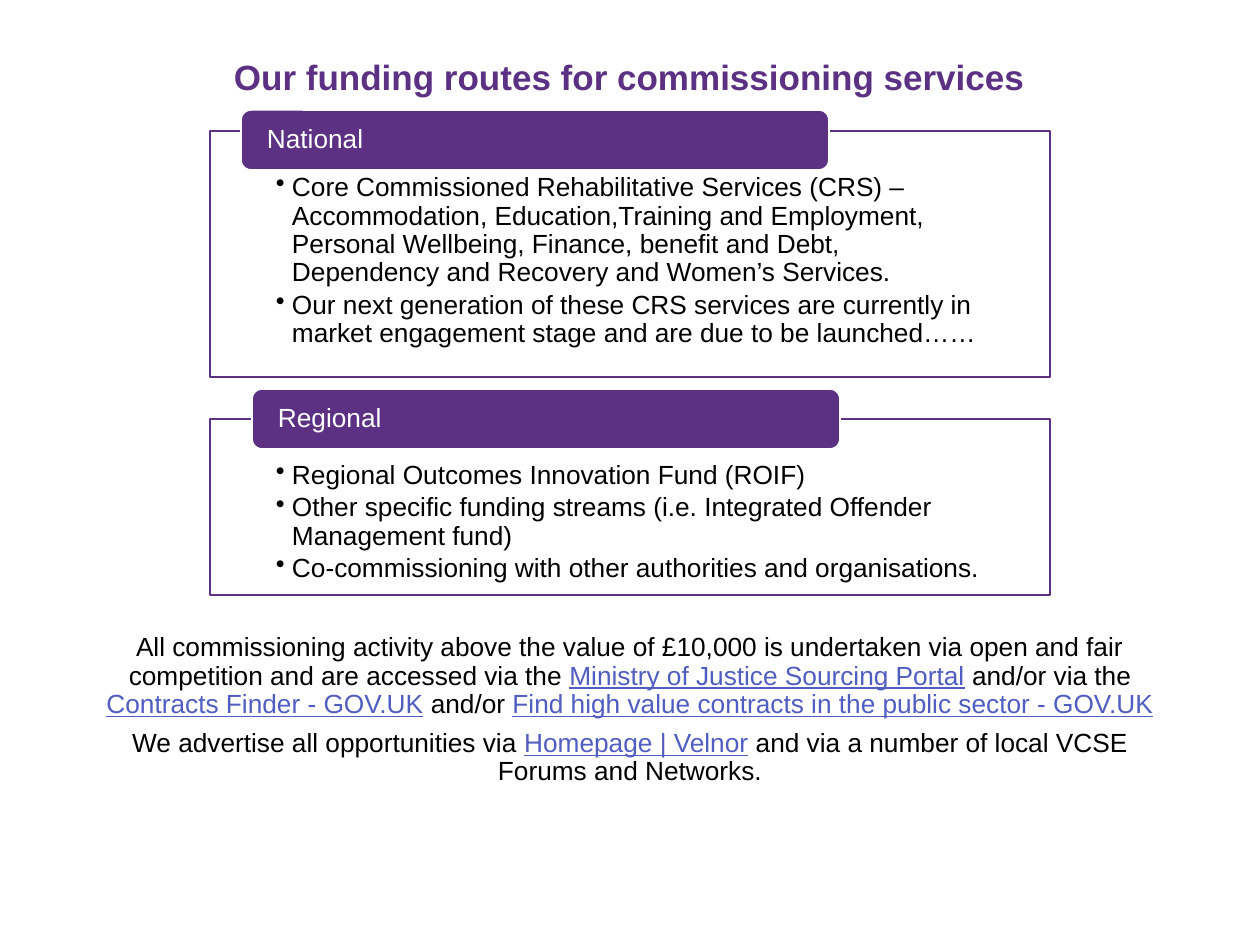
from lxml import etree
from pptx import Presentation
from pptx import util as u
from pptx.dml.color import RGBColor
from pptx.enum import shapes, text
from pptx.oxml.ns import qn

PX = 914400 / 126
FONT = "Arial"
COLOURS = {"purple": "5C3183", "black": "000000", "white": "FFFFFF", "link": "505DC1"}

# Each route: heading, heading left, frame top, frame height, bullets
ROUTES = [
    ("National", 241, 131, 246, [
        "Core Commissioned Rehabilitative Services (CRS) – Accommodation, "
        "Education,Training and Employment, Personal Wellbeing, Finance, benefit "
        "and Debt, Dependency and Recovery and Women’s Services.",
        "Our next generation of these CRS services are currently in market "
        "engagement stage and are due to be launched……",
    ]),
    ("Regional", 252, 419, 176, [
        "Regional Outcomes Innovation Fund (ROIF)",
        "Other specific funding streams (i.e. Integrated Offender Management fund)",
        "Co-commissioning with other authorities and organisations.",
    ]),
]
HEADING_TOPS = {"National": 110, "Regional": 389}

# Each paragraph: (words, is a link)
ACCESS_NOTES = [
    [("All commissioning activity above the value of £10,000 is undertaken via open "
      "and fair competition and are accessed via the ", False),
     ("Ministry of Justice Sourcing Portal", True),
     (" and/or via the ", False),
     ("Contracts Finder - GOV.UK", True),
     (" and/or ", False),
     ("Find high value contracts in the public sector - GOV.UK", True)],
    [("We advertise all opportunities via ", False),
     ("Homepage | Velnor", True),
     (" and via a number of local VCSE Forums and Networks.", False)],
]


def px(length):
    return u.Emu(round(length * PX))


def colour(name):
    return RGBColor.from_string(COLOURS[name])


def set_frame(frame, insets, anchor):
    frame.word_wrap = True
    frame.auto_size = text.MSO_AUTO_SIZE.NONE
    frame.vertical_anchor = anchor
    (frame.margin_left, frame.margin_top,
     frame.margin_right, frame.margin_bottom) = map(px, insets)


def format_paragraph(paragraph, ink, align, size=15, after=0, bold=False):
    paragraph.alignment = align
    paragraph.line_spacing = 0.9
    paragraph.space_before = u.Pt(0)
    paragraph.space_after = u.Pt(after)
    font = paragraph.font
    font.name, font.size, font.bold = FONT, u.Pt(size), bold
    if ink:
        font.color.rgb = colour(ink)


def add_paragraph(frame, index):
    return frame.add_paragraph() if index else frame.paragraphs[0]


def add_bullet(paragraph):
    props = paragraph._p.get_or_add_pPr()
    props.set("marL", str(px(16)))
    props.set("indent", str(-px(16)))
    etree.SubElement(props, qn("a:buChar")).set("char", "•")


def add_panel(slide, kind, box, fill, line):
    panel = slide.shapes.add_shape(kind, *map(px, box))
    panel.shadow.inherit = False
    panel.fill.solid()
    panel.fill.fore_color.rgb = colour(fill)
    panel.line.color.rgb = colour(line)
    panel.line.width = u.Pt(1)
    return panel


def add_title(slide):
    title = slide.shapes.title
    title.left, title.top, title.width, title.height = map(px, (64, 38, 1131, 83))
    set_frame(title.text_frame, (0, 0, 0, 0), text.MSO_ANCHOR.MIDDLE)
    title.text_frame.text = "Our funding routes for commissioning services"
    format_paragraph(title.text_frame.paragraphs[0], "purple",
                     text.PP_ALIGN.CENTER, size=20, bold=True)


def add_route(slide, name, heading_left, top, height, bullets):
    # Outlined frame with its bullets
    route = add_panel(slide, shapes.MSO_SHAPE.RECTANGLE,
                      (210, top, 840, height), "white", "purple")
    white = route.fill._xPr.find(qn("a:solidFill"))[0]
    etree.SubElement(white, qn("a:alpha")).set("val", "90000")
    set_frame(route.text_frame, (66, 43, 66, 15), text.MSO_ANCHOR.TOP)
    for index, words in enumerate(bullets):
        bullet = add_paragraph(route.text_frame, index)
        bullet.text = words
        add_bullet(bullet)
        format_paragraph(bullet, "black", text.PP_ALIGN.LEFT, after=2.25)

    # Heading tab over the frame's top edge
    heading = add_panel(slide, shapes.MSO_SHAPE.ROUNDED_RECTANGLE,
                        (heading_left, HEADING_TOPS[name], 588, 60), "purple", "white")
    set_frame(heading.text_frame, (23, 0, 23, 0), text.MSO_ANCHOR.MIDDLE)
    heading.text_frame.text = name
    format_paragraph(heading.text_frame.paragraphs[0], "white", text.PP_ALIGN.LEFT)


def add_access_notes(slide):
    notes = slide.shapes.add_textbox(*map(px, (87, 634, 1086, 178))).text_frame
    set_frame(notes, (0, 0, 0, 0), text.MSO_ANCHOR.TOP)
    for index, parts in enumerate(ACCESS_NOTES):
        note = add_paragraph(notes, index)
        format_paragraph(note, None, text.PP_ALIGN.CENTER, after=6)
        for words, is_link in parts:
            run = note.add_run()
            run.text = words
            run.font.color.rgb = colour("link" if is_link else "black")
            run.font.underline = is_link


def main():
    deck = Presentation()
    deck.slide_width, deck.slide_height = px(1260), px(945)
    slide = deck.slides.add_slide(deck.slide_layouts[5])
    add_title(slide)
    for route in ROUTES:
        add_route(slide, *route)
    add_access_notes(slide)
    deck.save("out.pptx")


if __name__ == "__main__":
    main()
